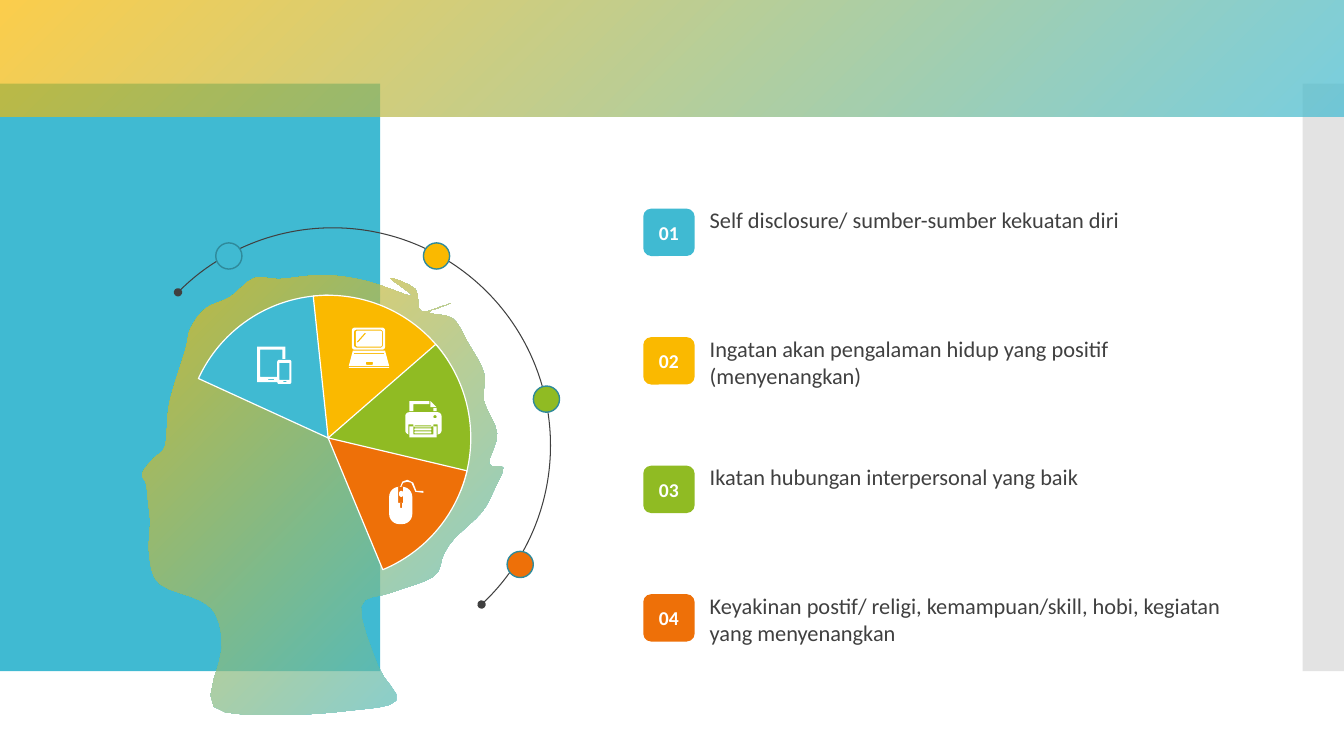
import math
from pptx import Presentation
from pptx.dml.color import RGBColor
from pptx.enum import shapes, text
from pptx.oxml import ns
from pptx.util import Inches, Pt
from lxml import etree

# Content: colour, text, pie start and end in degrees, dot on the arc
BLUE, YELLOW, GREEN, ORANGE = "40BAD2", "FAB900", "90BB23", "EE7008"
WHITE, DARK, GREY, TEAL = "FFFFFF", "404040", "C8C8C8", "2F8A9B"
FONT = "Calibri"
ITEMS = [
    (BLUE, "Self disclosure/ sumber-sumber kekuatan diri",
     204.61, 270, (2.14, 2.41)),
    (YELLOW, "Ingatan akan pengalaman hidup yang positif (menyenangkan)",
     264.01, 326.5, (4.2, 2.41)),
    (GREEN, "Ikatan hubungan interpersonal yang baik",
     318.98, 22.31, (5.29, 3.83)),
    (ORANGE, "Keyakinan postif/ religi, kemampuan/skill, hobi, kegiatan yang menyenangkan",
     13.32, 67.47, (5.03, 5.47)),
]

# Head outline, rounded by a spline
HEAD = [
    (1.41, 4.7), (1.52, 4.55), (1.64, 4.42), (1.68, 4), (1.84, 3.47), (1.89, 3.26),
    (2.04, 3.06), (2.28, 2.95), (2.52, 2.76), (2.77, 2.77), (3.21, 2.73), (3.64, 2.79),
    (4.09, 2.94), (3.87, 2.76), (4.12, 2.87), (4.18, 3.09), (4.47, 3.01), (4.25, 3.1),
    (4.49, 3.16), (4.64, 3.4), (4.8, 3.7), (4.8, 3.98), (4.93, 4.3), (4.85, 4.6),
    (4.99, 4.64), (4.91, 4.84), (4.78, 5.08), (4.51, 5.34), (4.4, 5.5), (4.3, 5.72),
    (3.88, 5.88), (3.58, 6.02), (3.75, 6.61), (3.93, 6.95), (3.47, 7.05), (2.8, 7.09),
    (2.12, 7.01), (2.2, 6.44), (2.15, 6.12), (1.99, 5.96), (1.58, 5.79), (1.48, 5.5),
    (1.49, 5.18), (1.47, 4.98), (1.45, 4.8),
]

# Icons: a list holds points, a tuple is a box (left, top, right, bottom, radius)
LAPTOP = [
    (3.49, 3.25, 3.82, 3.47, 0.03), (3.51, 3.27, 3.8, 3.45, 0.03),
    (3.53, 3.28, 3.79, 3.44, 0.02),
    [(3.62, 3.3), (3.63, 3.31), (3.55, 3.4), (3.54, 3.39)],
    [(3.5, 3.48), (3.82, 3.48), (3.86, 3.63), (3.46, 3.63)],
    (3.51, 3.5, 3.81, 3.51, 0), (3.63, 3.59, 3.7, 3.62, 0.01),
    (3.46, 3.64, 3.86, 3.65, 0),
]
MOUSE = [
    (3.86, 4.83, 4.09, 5.2, 0.1), (3.95, 4.83, 4, 4.99, 0),
    (3.97, 4.99, 3.99, 5.04, 0), (3.96, 4.87, 4, 4.93, 0.02),
    [(3.97, 4.83), (3.99, 4.78), (4.04, 4.76), (4.1, 4.79), (4.13, 4.87), (4.2, 4.87),
     (4.2, 4.89), (4.12, 4.88), (4.08, 4.79), (4.04, 4.78), (4, 4.79), (3.98, 4.83)],
]
TABLET = [
    [(2.55, 3.44), (2.83, 3.44), (2.83, 3.56), (2.8, 3.56), (2.8, 3.47), (2.58, 3.47),
     (2.58, 3.74), (2.75, 3.74), (2.75, 3.79), (2.55, 3.79)],
    (2.66, 3.76, 2.72, 3.77, 0), (2.75, 3.57, 2.89, 3.81, 0.02),
    (2.77, 3.6, 2.87, 3.77, 0), (2.81, 3.78, 2.84, 3.79, 0),
]
PRINTER = [
    [(4.06, 3.98), (4.26, 3.98), (4.26, 4.01), (4.1, 4.01), (4.1, 4.08), (4.06, 4.08)],
    [(4.27, 3.98), (4.33, 4.04), (4.27, 4.04)], (4.3, 4.05, 4.33, 4.08, 0),
    (4.02, 4.09, 4.38, 4.31, 0.04), (4.3, 4.12, 4.33, 4.15, 0.01),
    (4.05, 4.21, 4.34, 4.31, 0), (4.06, 4.23, 4.33, 4.34, 0),
    (4.1, 4.21, 4.3, 4.31, 0),
] + [(4.11, top, 4.28, top + 0.02, 0.01) for top in (4.22, 4.25, 4.28)]

presentation = Presentation()
presentation.slide_width, presentation.slide_height = Inches(13.33), Inches(7.5)
slide = presentation.slides.add_slide(presentation.slide_layouts[6])
KIND = shapes.MSO_SHAPE


def rgb(value):
    return RGBColor.from_string(value)


def style(shape, fill=None, line=None, width=1, alpha=None):
    """A pair of colours as fill makes a diagonal gradient."""
    shape.shadow.inherit = False
    if isinstance(fill, tuple):
        shape.fill.gradient()
        shape.fill.gradient_angle = 135
        for stop, color in zip(shape.fill.gradient_stops, fill):
            stop.color.rgb = rgb(color)
    elif fill:
        shape.fill.solid()
        shape.fill.fore_color.rgb = rgb(fill)
    else:
        shape.fill.background()
    if alpha:
        for color in shape._element.spPr.iter(ns.qn("a:srgbClr")):
            etree.SubElement(color, ns.qn("a:alpha")).set("val", str(alpha * 1000))
    if line:
        shape.line.color.rgb = rgb(line)
        shape.line.width = Pt(width)
    else:
        shape.line.fill.background()
    return shape


def add(parent, kind, left, top, width, height, *look, **options):
    shape = parent.shapes.add_shape(
        kind, Inches(left), Inches(top), Inches(width), Inches(height))
    return style(shape, *look, **options)


def smooth(points, steps=4):
    """Closed Catmull-Rom spline through the points."""
    curve = []
    for index, b in enumerate(points):
        a, c = points[index - 1], points[(index + 1) % len(points)]
        d = points[(index + 2) % len(points)]
        for t in (step / steps for step in range(steps)):
            curve.append([
                q + t / 2 * (r - p + t * (2 * p - 5 * q + 4 * r - s
                                          + t * (3 * q - p - 3 * r + s)))
                for p, q, r, s in zip(a, b, c, d)])
    return curve


def points_of(contour):
    if isinstance(contour, list):
        return contour
    left, top, right, bottom, radius = contour
    corners = [(right - radius, bottom - radius), (left + radius, bottom - radius),
               (left + radius, top + radius), (right - radius, top + radius)]
    return [(x + radius * math.cos(math.radians(90 * corner + turn)),
             y + radius * math.sin(math.radians(90 * corner + turn)))
            for corner, (x, y) in enumerate(corners)
            for turn in (range(0, 91, 15) if radius else [0])]


def add_outline(contours, fill, alpha=None):
    builder = None
    for contour in contours:
        start, *rest = [(Inches(x), Inches(y)) for x, y in points_of(contour)]
        if builder is None:
            builder = slide.shapes.build_freeform(*start)
        else:
            builder.move_to(*start)
        builder.add_line_segments(rest, close=True)
    style(builder.convert_to_shape(), fill, alpha=alpha)


def write(shape, words, size, color, bold=False):
    frame = shape.text_frame
    frame.word_wrap = True
    frame.text = words
    font = frame.paragraphs[0].runs[0].font
    font.name, font.size, font.bold = FONT, Pt(size), bold
    font.color.rgb = rgb(color)
    return frame


def set_angles(shape, start, end):
    shape.adjustments[0], shape.adjustments[1] = start * 0.6, end * 0.6


# Background bands and head
add(slide, KIND.RECTANGLE, 0, 0.83, 3.77, 5.83, BLUE)
add(slide, KIND.RECTANGLE, 12.92, 0.83, 0.41, 5.83, GREY, alpha=50)
add(slide, KIND.RECTANGLE, 0, 0, 13.33, 1.16, (BLUE, YELLOW), alpha=70)
add_outline([smooth(HEAD)], (BLUE, YELLOW), alpha=70)

# Pie slices
pie = slide.shapes.add_group_shape()
for color, _, start, end, _ in ITEMS:
    piece = add(pie, KIND.PIE, 1.84, 2.93, 2.83, 2.83, color, WHITE, 0.85)
    set_angles(piece, start, end)

# Arc with its dots
orbit = slide.shapes.add_group_shape()
arc = add(orbit, KIND.ARC, 1.14, 2.26, 4.32, 4.32, None, DARK, 0.75)
set_angles(arc, 224.73, 46.9)
for end in ("a:headEnd", "a:tailEnd"):
    etree.SubElement(arc.line._get_or_add_ln(), ns.qn(end)).set("type", "oval")
for color, _, _, _, (left, top) in ITEMS:
    add(orbit, KIND.OVAL, left, top, 0.26, 0.26, color, TEAL)

# Icons
for icon in (LAPTOP, MOUSE, TABLET, PRINTER):
    add_outline(icon, WHITE)

# Numbered list
for index, (color, words, *_) in enumerate(ITEMS):
    top = 2 + 1.275 * index
    height = 0.64 if len(words) > 50 else 0.37
    label = slide.shapes.add_textbox(
        Inches(6.94), Inches(top), Inches(5.51), Inches(height))
    write(label, words, 16, DARK).auto_size = text.MSO_AUTO_SIZE.SHAPE_TO_FIT_TEXT
    badge = add(slide, KIND.ROUNDED_RECTANGLE, 6.38, top + 0.07, 0.51, 0.47, color)
    frame = write(badge, f"{index + 1:02}", 14, WHITE, True)
    frame.vertical_anchor = text.MSO_ANCHOR.MIDDLE
    frame.paragraphs[0].alignment = text.PP_ALIGN.CENTER

presentation.save("out.pptx")
